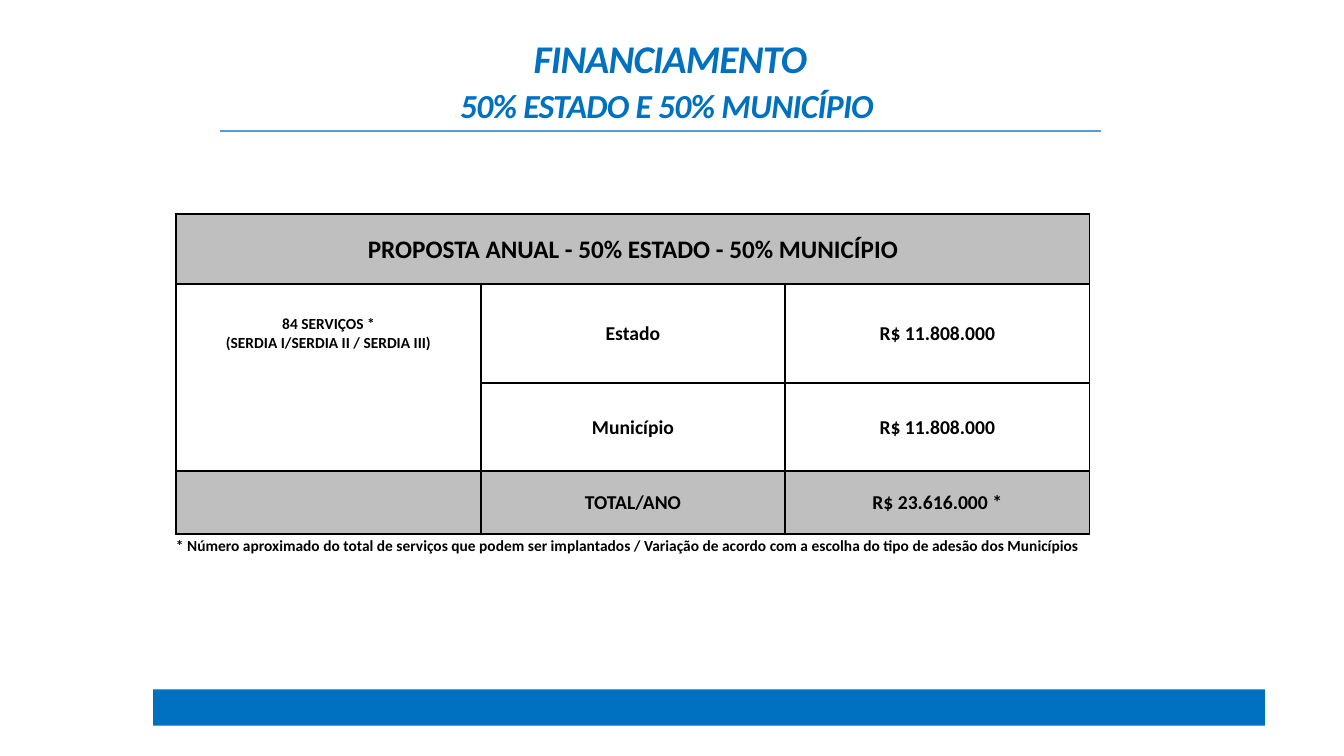
from lxml import etree
from pptx import Presentation, util as u
from pptx.dml.color import RGBColor
from pptx.enum import shapes, text
from pptx.oxml import ns

BLUE = RGBColor(0x00, 0x70, 0xC0)
RULE_BLUE = RGBColor(0x5B, 0x9B, 0xD5)
GRAY = RGBColor(0xBF, 0xBF, 0xBF)
WHITE = RGBColor(0xFF, 0xFF, 0xFF)
BLACK = RGBColor(0, 0, 0)

WIDTH, HEIGHT = u.Inches(13.333), u.Inches(7.5)
FONT = "Calibri"
CENTER, RIGHT = text.PP_ALIGN.CENTER, text.PP_ALIGN.RIGHT
MIDDLE, TOP = text.MSO_ANCHOR.MIDDLE, text.MSO_ANCHOR.TOP

COLUMN = 3.02
ROWS = [0.7, 0.98, 0.87, 0.63]
PROPOSAL = [
    ["PROPOSTA ANUAL - 50% ESTADO - 50% MUNICÍPIO", "", ""],
    ["84 SERVIÇOS *\n (SERDIA I/SERDIA II / SERDIA III) ", "Estado", "R$ 11.808.000"],
    ["", "Município", "R$ 11.808.000"],
    ["", "TOTAL/ANO", "R$ 23.616.000 *"],
]
FOOTNOTE = ("* Número aproximado do total de serviços que podem ser implantados / "
            "Variação de acordo com a escolha do tipo de adesão dos Municípios")


def inches(*lengths):
    return [u.Inches(length) for length in lengths]


def write(frame, content, sizes, color=BLACK, align=CENTER, italic=False):
    """Fill a frame; sizes gives one size per paragraph."""
    frame.text = content
    for paragraph, size in zip(frame.paragraphs, sizes):
        paragraph.alignment = align
        for font in [paragraph.font] + [run.font for run in paragraph.runs]:
            font.name, font.size, font.bold = FONT, u.Pt(size), True
            font.italic = italic
            font.color.rgb = color


def add_text(slide, box, content, sizes, anchor=TOP, **style):
    frame = slide.shapes.add_textbox(*inches(*box)).text_frame
    frame.word_wrap = True
    frame.vertical_anchor = anchor
    write(frame, content, sizes, **style)
    return frame


def add_bar(slide, box, color):
    bar = slide.shapes.add_shape(shapes.MSO_SHAPE.RECTANGLE, *inches(*box))
    bar.shadow.inherit = False
    bar.fill.solid()
    bar.fill.fore_color.rgb = color
    bar.line.fill.background()


def add_rule(slide, left, right, y):
    rule = slide.shapes.add_connector(
        shapes.MSO_CONNECTOR.STRAIGHT, *inches(left, y, right, y))
    rule.line.color.rgb = RULE_BLUE
    rule.line.width = u.Pt(1)
    etree.SubElement(rule._element.spPr, ns.qn("a:effectLst"))


def set_borders(cell, hidden=""):
    """Black border on each side, except the sides named in hidden."""
    properties = cell._tc.get_or_add_tcPr()
    for side in "LRTB":
        border = etree.SubElement(properties, ns.qn(f"a:ln{side}"), w=str(u.Pt(1.5)))
        if side in hidden:
            etree.SubElement(border, ns.qn("a:noFill"))
        else:
            fill = etree.SubElement(border, ns.qn("a:solidFill"))
            etree.SubElement(fill, ns.qn("a:srgbClr"), val=str(BLACK))


def cell_size(row, column):
    if row == 0:
        return 18
    return 11 if column == 0 else 14


def add_proposal(slide, left, top):
    table = slide.shapes.add_table(
        len(ROWS), 3, *inches(left, top, 3 * COLUMN, sum(ROWS))).table
    for column in table.columns:
        column.width = u.Inches(COLUMN)
    for row, height in zip(table.rows, ROWS):
        row.height = u.Inches(height)

    # The services column stays open between its two body rows
    open_sides = {(1, 0): "B", (2, 0): "T"}
    for r, entries in enumerate(PROPOSAL):
        for c, entry in enumerate(entries):
            cell = table.cell(r, c)
            set_borders(cell, open_sides.get((r, c), ""))
            cell.fill.solid()
            cell.fill.fore_color.rgb = GRAY if r in (0, len(ROWS) - 1) else WHITE
            cell.vertical_anchor = MIDDLE
            cell.margin_left = cell.margin_right = cell.margin_top = u.Inches(0.01)
            cell.margin_bottom = 0
            write(cell.text_frame, entry, [cell_size(r, c)] * 2)
    table.cell(0, 0).merge(table.cell(0, 2))


def add_heading(slide):
    heading = add_text(slide, (2.28, 0.35, 8.74, 0.84),
                       "FINANCIAMENTO\n50% ESTADO E 50% MUNICÍPIO ", [28, 24],
                       anchor=MIDDLE, color=BLUE, italic=True)
    for paragraph in heading.paragraphs:
        paragraph.line_spacing = 1.1
        for run in paragraph.runs:
            run.font._element.set("spc", "-50")


def main():
    deck = Presentation()
    deck.slide_width, deck.slide_height = WIDTH, HEIGHT
    slide = deck.slides.add_slide(deck.slide_layouts[6])

    # Footer band and heading rule
    add_bar(slide, (1.52, 6.84, 11.03, 0.36), BLUE)
    add_rule(slide, 2.18, 10.92, 1.3)

    # Proposal table with its footnote
    add_proposal(slide, 1.75, 2.12)
    add_text(slide, (1.15, 5.27, 9.66, 0.29), FOOTNOTE, [11], align=RIGHT)

    add_heading(slide)
    deck.save("out.pptx")


if __name__ == "__main__":
    main()
